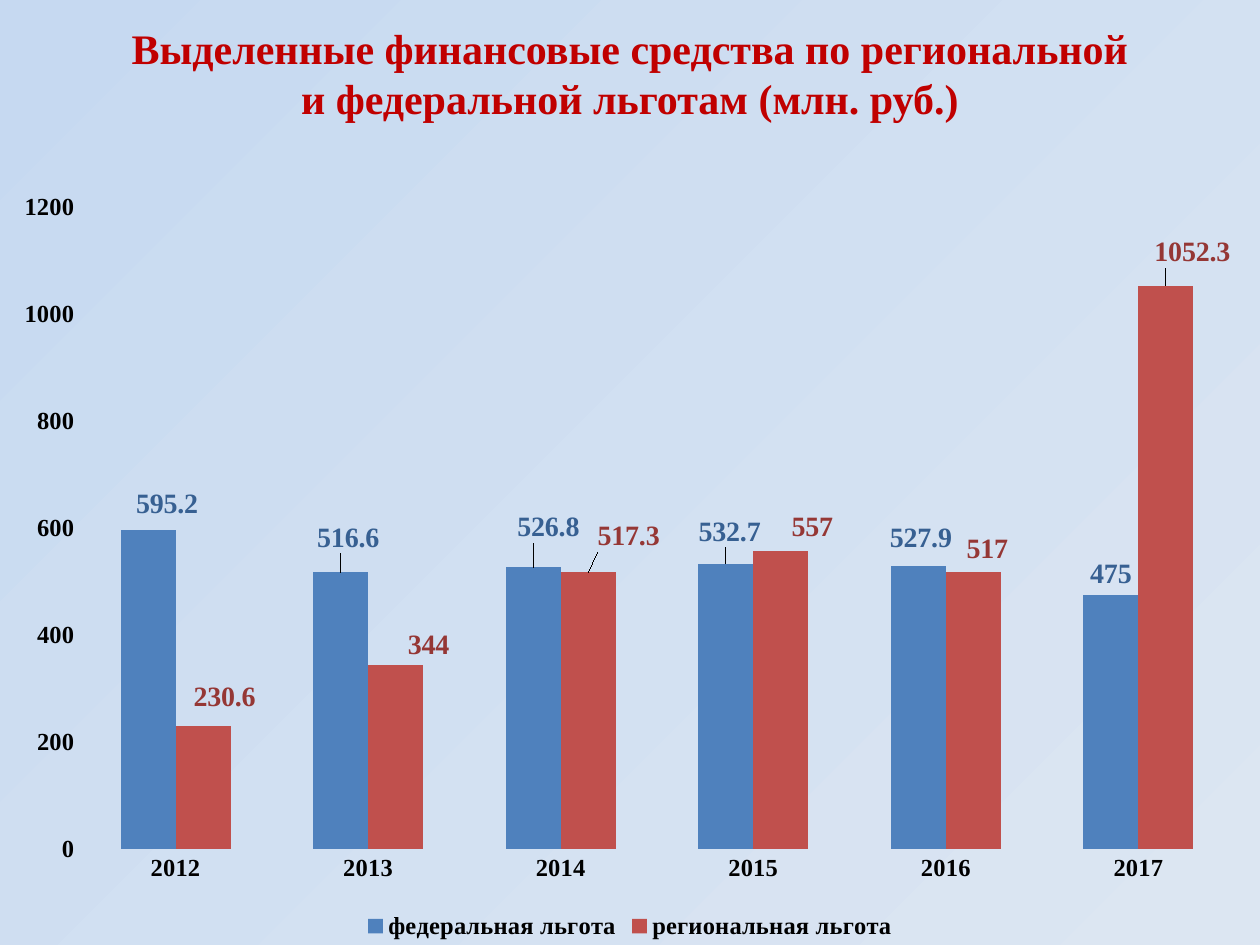
from lxml import etree
from pptx import Presentation
from pptx import util as u
from pptx.chart import data as chart_data
from pptx.dml.color import RGBColor
from pptx.enum import chart as ch, text
from pptx.oxml import ns

# Content
TITLE = ["Выделенные финансовые средства по региональной",
         "и федеральной льготам (млн. руб.)"]
YEARS = ["2012", "2013", "2014", "2015", "2016", "2017"]
# Label shifts are inches right and down from the usual place above the column
BENEFITS = [
    dict(name="федеральная льгота", column="4F81BD", label="376092",
         values=[595.2, 516.6, 526.8, 532.7, 527.9, 475],
         shifts=[(.15, -.04), (.06, -.11), (.12, -.15),
                 (.03, -.09), (.02, -.06), (0, 0)]),
    dict(name="региональная льгота", column="C0504D", label="953735",
         values=[230.6, 344, 517.3, 557, 517, 1052.3],
         shifts=[(.17, -.06), (.26, .01), (.32, -.12),
                 (.25, -.02), (.11, -.02), (.21, -.10)]),
]
THEME = dict(font="Times New Roman", title="C00000", text="000000",
             sky=("C6D9F1", "DCE6F2"),
             title_size=24, label_size=16, axis_size=14)

SLIDE_W, SLIDE_H = 10, 7.5
CHART_TOP = 1.41
CHART_H = SLIDE_H - CHART_TOP
PLOT = dict(x=0.63, y=0.23, w=9.17, h=5.1)  # inches inside the chart


def style(font, size, color):
    font.name, font.size, font.bold = THEME["font"], u.Pt(size), True
    font.color.rgb = RGBColor.from_string(color)


def set_layout(layout, inches, inner=False):
    """Write a manual layout, turning inches into fractions of the chart."""
    def add(parent, tag, **attributes):
        return etree.SubElement(parent, ns.qn("c:" + tag), attributes)

    manual = add(layout, "manualLayout")
    if inner:
        add(manual, "layoutTarget", val="inner")
        add(manual, "xMode", val="edge")
        add(manual, "yMode", val="edge")
    for side, length in inches.items():
        whole = SLIDE_W if side in "xw" else CHART_H
        add(manual, side, val=f"{length / whole:.4f}")


prs = Presentation()
prs.slide_width, prs.slide_height = u.Inches(SLIDE_W), u.Inches(SLIDE_H)
slide = prs.slides.add_slide(prs.slide_layouts[6])

# Background, from the top left corner to the bottom right
sky = slide.background.fill
sky.gradient()
sky.gradient_angle = 315
for stop, color in zip(sky.gradient_stops, THEME["sky"]):
    stop.color.rgb = RGBColor.from_string(color)

# Chart
data = chart_data.CategoryChartData()
data.categories = YEARS
for benefit in BENEFITS:
    data.add_series(benefit["name"], benefit["values"])
funding = slide.shapes.add_chart(
    ch.XL_CHART_TYPE.COLUMN_CLUSTERED, 0, u.Inches(CHART_TOP),
    u.Inches(SLIDE_W), u.Inches(CHART_H), data).chart
funding.has_title = False
style(funding.font, THEME["axis_size"], THEME["text"])

plot = funding.plots[0]
plot.gap_width, plot.overlap, plot.vary_by_categories = 150, 0, False
plot_area = funding.element.find(".//" + ns.qn("c:plotArea"))
layout = plot_area.find(ns.qn("c:layout"))
if layout is None:
    layout = etree.Element(ns.qn("c:layout"))
    plot_area.insert(0, layout)
set_layout(layout, PLOT, inner=True)

# Axes and legend
for axis in (funding.category_axis, funding.value_axis):
    axis.has_major_gridlines = False
    axis.major_tick_mark = axis.minor_tick_mark = ch.XL_TICK_MARK.NONE
    axis.format.line.fill.background()
    style(axis.tick_labels.font, THEME["axis_size"], THEME["text"])
amounts = funding.value_axis
amounts.minimum_scale, amounts.maximum_scale, amounts.major_unit = 0, 1200, 200

funding.has_legend = True
funding.legend.position = ch.XL_LEGEND_POSITION.BOTTOM
funding.legend.include_in_layout = False
style(funding.legend.font, THEME["axis_size"], THEME["text"])

# Columns and their shifted labels
for series, benefit in zip(plot.series, BENEFITS):
    series.format.fill.solid()
    series.format.fill.fore_color.rgb = RGBColor.from_string(benefit["column"])
    series.invert_if_negative = False
    labels = series.data_labels
    labels.show_value = True
    labels.position = ch.XL_LABEL_POSITION.OUTSIDE_END
    style(labels.font, THEME["label_size"], benefit["label"])
    for i, (dx, dy) in enumerate(benefit["shifts"]):
        label = series.points[i].data_label
        label.position = ch.XL_LABEL_POSITION.OUTSIDE_END
        style(label.font, THEME["label_size"], benefit["label"])
    index_tags = labels._element.findall(f"{ns.qn('c:dLbl')}/{ns.qn('c:idx')}")
    for index_tag, (dx, dy) in zip(index_tags, benefit["shifts"]):
        layout = etree.Element(ns.qn("c:layout"))
        index_tag.addnext(layout)
        set_layout(layout, dict(x=dx, y=dy))

# Title
heading = slide.shapes.add_textbox(
    0, u.Inches(0.13), u.Inches(SLIDE_W), u.Inches(0.91)).text_frame
heading.word_wrap = True
heading.auto_size = text.MSO_AUTO_SIZE.SHAPE_TO_FIT_TEXT
heading.text = "\n".join(TITLE)
for line in heading.paragraphs:
    line.alignment = text.PP_ALIGN.CENTER
    style(line.font, THEME["title_size"], THEME["title"])

prs.save("out.pptx")
